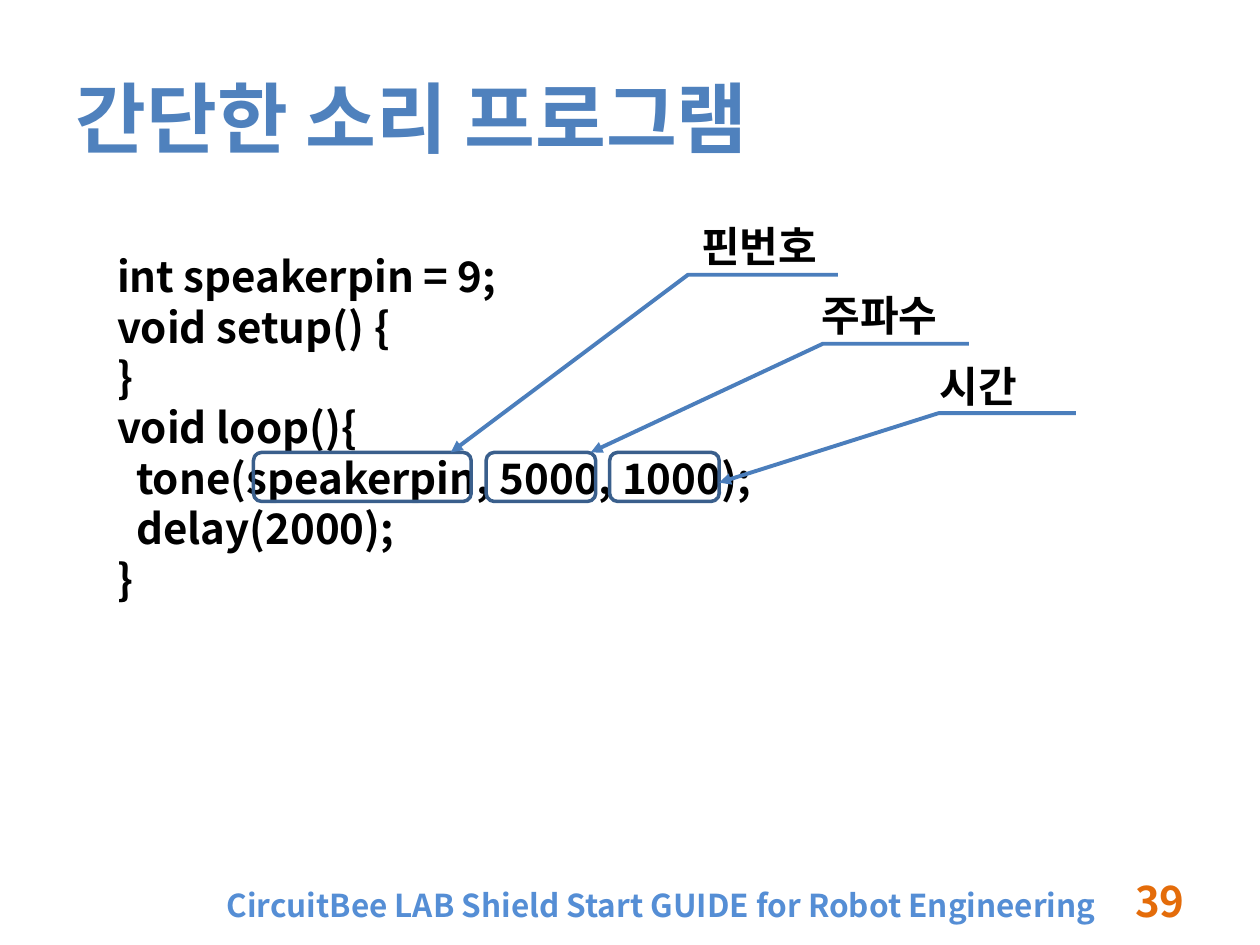
from dataclasses import dataclass

from pptx import Presentation
from pptx import util as u
from pptx.dml.color import RGBColor
from pptx.enum import shapes, text
from pptx.oxml import xmlchemy


@dataclass(frozen=True)
class Theme:
    font: str = "Noto Sans CJK KR"
    title: str = "4F81BD"
    body: str = "000000"
    footer: str = "558ED5"
    page: str = "E46C0A"
    frame: str = "3A5F8C"
    callout: str = "4B7EBC"
    title_size: int = 44
    body_size: int = 24
    footer_size: int = 18
    leading: float = 1.2


class Page:
    """Draws the parts of one slide in a common style."""

    def __init__(self, slide, theme):
        self.shapes = slide.shapes
        self.theme = theme

    def words(self, wording, box, size, color, middle=False, right=False):
        frame = self.shapes.add_textbox(*map(u.Cm, box)).text_frame
        frame.word_wrap = True
        frame.text = wording
        if middle:
            frame.vertical_anchor = text.MSO_ANCHOR.MIDDLE
        for line in frame.paragraphs:
            line.line_spacing = u.Pt(size * self.theme.leading)
            line.alignment = text.PP_ALIGN.RIGHT if right else text.PP_ALIGN.LEFT
            for run in line.runs:
                run.font.size = u.Pt(size)
                run.font.bold = True
                run.font.color.rgb = RGBColor.from_string(color)
                run.font.name = self.theme.font
                east_asian = xmlchemy.OxmlElement("a:ea")
                east_asian.set("typeface", self.theme.font)
                run.font._element.append(east_asian)

    def outline(self, shape, color, width):
        shape.shadow.inherit = False
        shape.fill.background()
        shape.line.color.rgb = RGBColor.from_string(color)
        shape.line.width = u.Pt(width)

    def frame(self, left, top, width, height):
        box = map(u.Cm, (left, top, width, height))
        argument = self.shapes.add_shape(shapes.MSO_SHAPE.ROUNDED_RECTANGLE, *box)
        self.outline(argument, self.theme.frame, 2)

    def callout(self, points):
        start, *rest = [(u.Cm(x), u.Cm(y)) for x, y in points]
        builder = self.shapes.build_freeform(*start)
        builder.add_line_segments(rest, close=False)
        leader = builder.convert_to_shape()
        self.outline(leader, self.theme.callout, 2.25)
        arrow = xmlchemy.OxmlElement("a:tailEnd")
        arrow.set("type", "triangle")
        leader.line._get_or_add_ln().append(arrow)


CODE = """int speakerpin = 9;
void setup() {
}
void loop(){
  tone(speakerpin, 5000, 1000);
  delay(2000);
}"""
FRAME_TOP, FRAME_HEIGHT = 9.12, 0.99
FRAMES = [(5.11, 4.39), (9.8, 2.21), (12.29, 2.21)]
CALLOUTS = [
    ("핀번호", (13.89, 4.32), (16.89, 14.25, 13.87), 5.54, (9.09, FRAME_TOP)),
    ("주파수", (16.31, 5.72), (19.53, 16.97, 16.59), 6.93, (11.91, FRAME_TOP)),
    ("시간", (18.69, 7.14), (21.69, 19.25, 18.92), 8.33, (14.5, 9.73)),
]


def main():
    deck = Presentation()
    deck.slide_width, deck.slide_height = u.Cm(25.4), u.Cm(19.05)
    theme = Theme()
    page = Page(deck.slides.add_slide(deck.slide_layouts[6]), theme)

    page.words("CircuitBee LAB Shield Start GUIDE for Robot Engineering",
               (4.32, 17.73, 18.8, 1.02), theme.footer_size, theme.footer)
    page.words("간단한 소리 프로그램", (1.27, 0.76, 22.86, 3.18),
               theme.title_size, theme.title, middle=True)
    page.words(CODE, (2.11, 4.93, 17.35, 7.44), theme.body_size, theme.body)
    for left, width in FRAMES:
        page.frame(left, FRAME_TOP, width, FRAME_HEIGHT)
    for label, corner, stops, level, target in CALLOUTS:
        page.callout([(x, level) for x in stops] + [target])
        page.words(label, (*corner, 3.2, 1.27), theme.body_size, theme.body)
    page.words("39", (18.21, 17.65, 5.92, 1.02), theme.body_size, theme.page,
               middle=True, right=True)
    deck.save("out.pptx")


if __name__ == "__main__":
    main()
